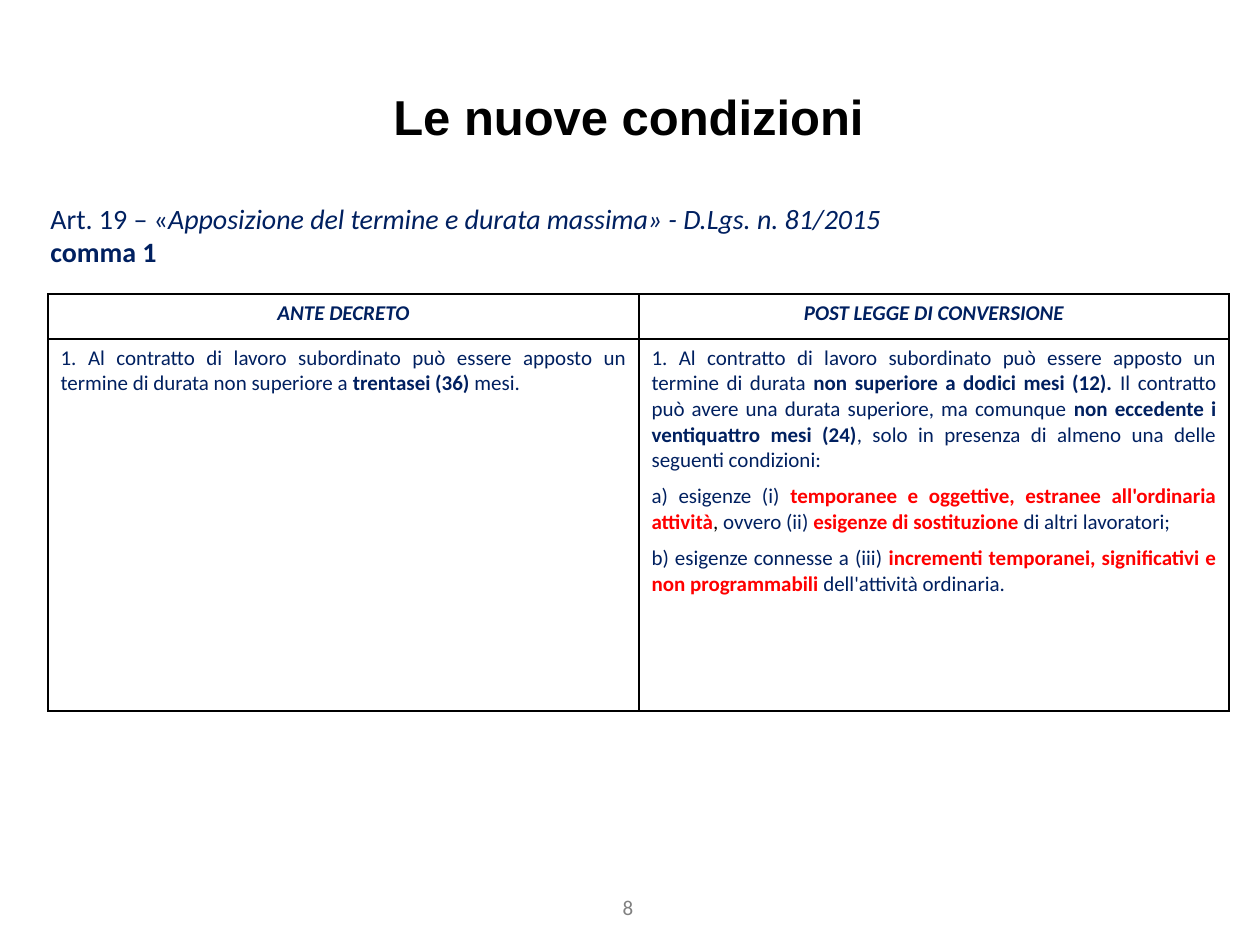
from lxml import etree
from pptx import Presentation
from pptx import util as u
from pptx.dml.color import RGBColor
from pptx.enum import text
from pptx.oxml import ns

NAVY = RGBColor(0x00, 0x20, 0x60)
RED = RGBColor(0xFF, 0x00, 0x00)
BLACK = RGBColor(0x00, 0x00, 0x00)
GREY = RGBColor(0x80, 0x80, 0x80)
CENTER, LEFT, JUSTIFY = text.PP_ALIGN.CENTER, text.PP_ALIGN.LEFT, text.PP_ALIGN.JUSTIFY

PLAIN = {"name": "Calibri", "size": u.Pt(12), "bold": False, "italic": False, "color": NAVY}
BOLD = {**PLAIN, "bold": True}
ALERT = {**BOLD, "color": RED}
HEADER = {**BOLD, "italic": True}
COMMA = {**PLAIN, "color": BLACK}
NUMBER = {**PLAIN, "color": GREY}
TITLE = {**BOLD, "name": "Arial", "size": u.Pt(28), "color": BLACK}
ARTICLE = {**PLAIN, "size": u.Pt(16)}


def px(length):
    return u.Emu(round(length * 914400 / 126))


def write(frame, paragraphs, align, space_after=0):
    for index, spans in enumerate(paragraphs):
        para = frame.add_paragraph() if index else frame.paragraphs[0]
        para.alignment = align
        para.space_after = u.Pt(space_after)
        for words, style in spans:
            span = para.add_run()
            span.text = words
            for key, value in style.items():
                if key == "color":
                    span.font.color.rgb = value
                else:
                    setattr(span.font, key, value)


deck = Presentation()
deck.slide_width, deck.slide_height = px(1260), px(945)
page = deck.slides.add_slide(deck.slide_layouts[6])

text_boxes = [
    ((481, 888, 294, 50), CENTER, text.MSO_ANCHOR.TOP, [[("8", NUMBER)]]),
    ((152, 57, 953, 118), CENTER, text.MSO_ANCHOR.MIDDLE, [[("Le nuove condizioni", TITLE)]]),
    ((38, 195, 1091, 149), LEFT, text.MSO_ANCHOR.TOP, [
        [("Art. 19 – «", ARTICLE),
         ("Apposizione del termine e durata massima» - D.Lgs. n. 81/2015", {**ARTICLE, "italic": True})],
        [("comma 1", {**ARTICLE, "bold": True})],
    ]),
]
for place, align, anchor, paragraphs in text_boxes:
    box = page.shapes.add_textbox(*map(px, place))
    box.text_frame.word_wrap = True
    box.text_frame.vertical_anchor = anchor
    write(box.text_frame, paragraphs, align)

before = [[
    ("1. Al contratto di lavoro subordinato può essere apposto un termine di durata non superiore a ", PLAIN),
    ("trentasei (36) ", BOLD),
    ("mesi.", PLAIN),
]]
after = [
    [("1. Al contratto di lavoro subordinato può essere apposto un termine di durata ", PLAIN),
     ("non superiore a dodici mesi (12). ", BOLD),
     ("Il contratto può avere una durata superiore, ma comunque ", PLAIN),
     ("non eccedente i ventiquattro mesi (24)", BOLD),
     (", solo in presenza di almeno una delle seguenti condizioni: ", PLAIN)],
    [(" esigenze (i) ", PLAIN),
     ("temporanee e oggettive, estranee all'ordinaria attività", ALERT),
     (",", COMMA),
     (" ovvero (ii) ", PLAIN),
     ("esigenze di sostituzione ", ALERT),
     ("di altri lavoratori;", PLAIN)],
    [(" esigenze connesse a (iii) ", PLAIN),
     ("incrementi temporanei, significativi e non programmabili ", ALERT),
     ("dell'attività ordinaria.", PLAIN)],
]
contents = [
    ([[("ANTE DECRETO", HEADER)]], CENTER, 0),
    ([[("POST LEGGE DI CONVERSIONE", HEADER)]], CENTER, 0),
    (before, JUSTIFY, 0),
    (after, JUSTIFY, 6),
]

table = page.shapes.add_table(2, 2, px(48), px(294), px(1181), px(417)).table
table.first_row = table.horz_banding = False
for column, width in zip(table.columns, (591, 590)):
    column.width = px(width)
for row, height in zip(table.rows, (45, 372)):
    row.height = px(height)

for cell, (paragraphs, align, space_after) in zip(table.iter_cells(), contents):
    write(cell.text_frame, paragraphs, align, space_after)
    properties = cell._tc.get_or_add_tcPr()
    for side in ("lnL", "lnR", "lnT", "lnB"):
        line = etree.SubElement(properties, ns.qn(f"a:{side}"), w=str(u.Pt(1)))
        fill = etree.SubElement(line, ns.qn("a:solidFill"))
        etree.SubElement(fill, ns.qn("a:srgbClr"), val=str(BLACK))
    cell.fill.background()

for para in table.cell(1, 1).text_frame.paragraphs[1:]:
    properties = para._p.get_or_add_pPr()
    properties.set("marL", "0")
    properties.set("indent", "0")
    etree.SubElement(properties, ns.qn("a:buFont"), typeface="+mj-lt")
    etree.SubElement(properties, ns.qn("a:buAutoNum"), type="alphaLcParenR")

deck.save("out.pptx")
